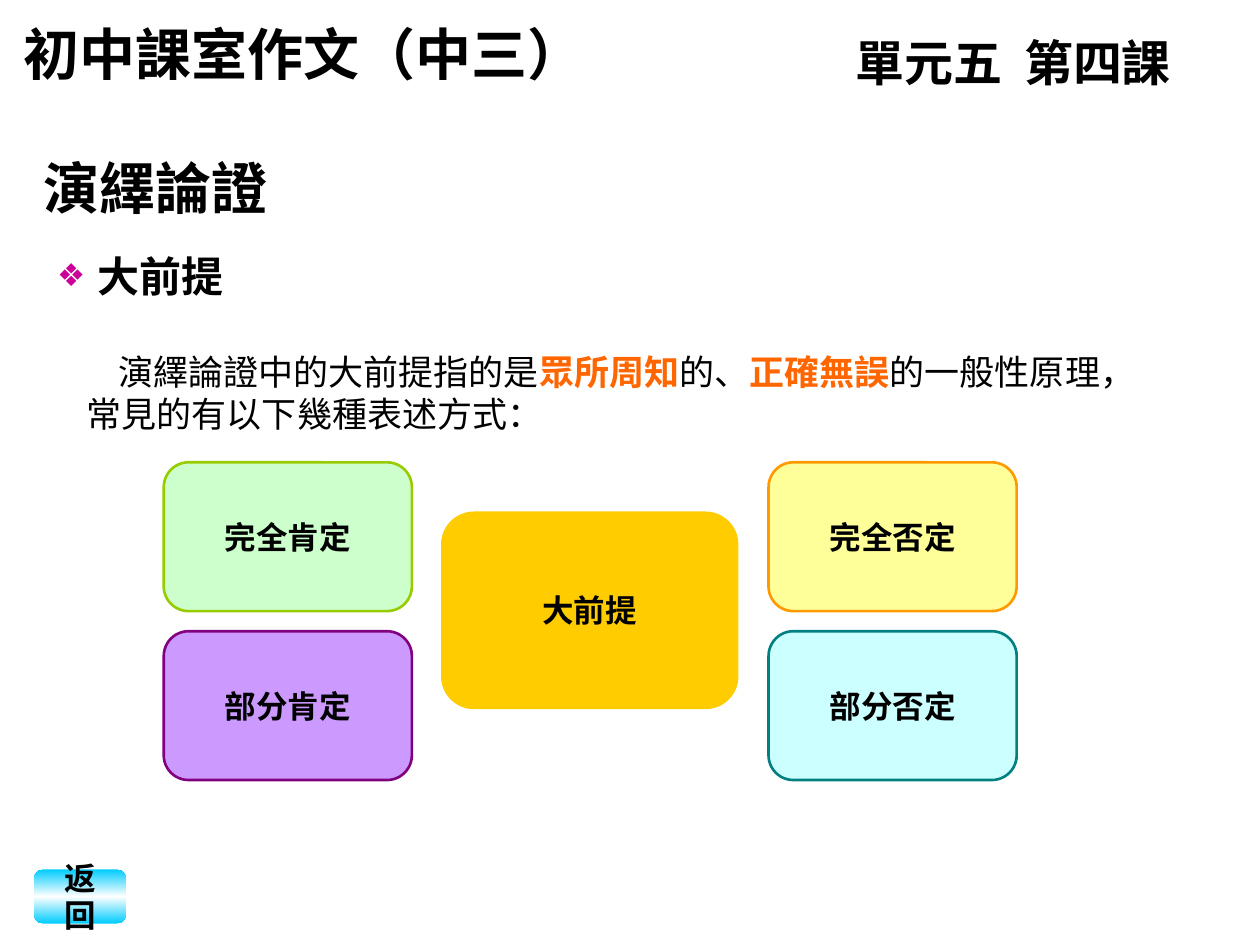
import pptx
import pptx.util
import pptx.dml.color
import pptx.enum.shapes
import pptx.enum.text
import pptx.oxml.ns
import lxml.etree

Pt = pptx.util.Pt
SHAPES = pptx.enum.shapes.MSO_SHAPE
MIDDLE = pptx.enum.text.MSO_ANCHOR.MIDDLE
CENTER = pptx.enum.text.PP_ALIGN.CENTER
BLACK = "000000"
ORANGE = "FF6600"


def color(value):
    return pptx.dml.color.RGBColor.from_string(value)


def add_child(parent, tag, **attributes):
    return lxml.etree.SubElement(parent, pptx.oxml.ns.qn(tag), attributes)


def write(para, text, size=18, font="Arial", fill=BLACK, bold=True):
    span = para.add_run()
    span.text = text
    span.font.size = Pt(size)
    span.font.bold = bold
    span.font.color.rgb = color(fill)
    span.font.name = font
    add_child(span.font._element, "a:ea", typeface=font)


def add_box(page, left, top, width, height):
    box = page.shapes.add_textbox(Pt(left), Pt(top), Pt(width), Pt(height))
    box.text_frame.word_wrap = True
    return box.text_frame


def add_heading(page, place, text, **style):
    write(add_box(page, *place).paragraphs[0], text, **style)


def set_indent(para, margin, first):
    properties = para._p.get_or_add_pPr()
    properties.set("marL", str(Pt(margin)))
    properties.set("indent", str(Pt(first)))
    return properties


def add_bullet_heading(page, place, text):
    para = add_box(page, *place).paragraphs[0]
    properties = set_indent(para, 29, -23)
    bullet_color = add_child(properties, "a:buClr")
    add_child(bullet_color, "a:srgbClr", val="CC0099")
    add_child(properties, "a:buSzPct", val="75000")
    add_child(properties, "a:buFont", typeface="Arial")
    add_child(properties, "a:buChar", char="❖")
    write(para, text, size=24, font="Noto Sans CJK TC")


def add_explanation(page, place, parts):
    frame = add_box(page, *place)
    frame.vertical_anchor = MIDDLE
    para = frame.paragraphs[0]
    set_indent(para, 0, 18)
    para.line_spacing = Pt(24)
    for text, strong in parts:
        write(para, text, size=20, font="Noto Sans CJK SC",
              fill=ORANGE if strong else BLACK, bold=strong)


def add_card(page, place, text, fill=None, line=None, kind=SHAPES.ROUNDED_RECTANGLE):
    card = page.shapes.add_shape(kind, *[Pt(value) for value in place])
    card.shadow.inherit = False
    if fill:
        card.fill.solid()
        card.fill.fore_color.rgb = color(fill)
    if line:
        card.line.color.rgb = color(line)
        card.line.width = Pt(1.5)
    else:
        card.line.fill.background()
    frame = card.text_frame
    frame.word_wrap = True
    frame.vertical_anchor = MIDDLE
    frame.paragraphs[0].alignment = CENTER
    write(frame.paragraphs[0], text)
    return card


def add_return_button(page, place, text):
    button = add_card(page, place, text, kind=SHAPES.FLOWCHART_ALTERNATE_PROCESS)
    button.fill.gradient()
    button.fill.gradient_angle = 270
    stops = button._element.spPr.find(pptx.oxml.ns.qn("a:gradFill")).find(
        pptx.oxml.ns.qn("a:gsLst"))
    for stop in list(stops):
        stops.remove(stop)
    for percent, value in [(0, "00CCFF"), (50, "FFFFFF"), (100, "00CCFF")]:
        stop = add_child(stops, "a:gs", pos=str(percent * 1000))
        add_child(stop, "a:srgbClr", val=value)


def main():
    deck = pptx.Presentation()
    deck.slide_width, deck.slide_height = Pt(720), Pt(540)
    page = deck.slides.add_slide(deck.slide_layouts[6])

    add_bullet_heading(page, (19.5, 139.7, 289.5, 41), "大前提")
    add_heading(page, (18, 84.2, 251.3, 45.4), "演繹論證", size=32)
    add_heading(page, (481.7, 15.1, 241.2, 41), "單元五  第四課", size=28, font="Cabin")
    add_heading(page, (6.5, 7.9, 375.8, 45.4), "初中課室作文（中三）", size=32, font="Cabin")
    add_explanation(page, (42.5, 196.5, 629.3, 55.4), [
        ("演繹論證中的大前提指的是", False),
        ("眾所周知", True),
        ("的、", False),
        ("正確無誤", True),
        ("的一般性原理，常見的有以下幾種表述方式：", False),
    ])

    add_card(page, (252, 292.3, 170, 113), "大前提", fill="FFCC00")
    cards = [
        ("完全肯定", "CCFFCC", "99CC00"),
        ("完全否定", "FFFF99", "FF9900"),
        ("部分肯定", "CC99FF", "800080"),
        ("部分否定", "CCFFFF", "008080"),
    ]
    for index, (text, fill, line) in enumerate(cards):
        row, column = divmod(index, 2)
        place = (93.6 + 345.6 * column, 264.2 + 96.5 * row, 141.8, 85)
        add_card(page, place, text, fill=fill, line=line)
    add_return_button(page, (19.5, 496.8, 52.5, 31), "返回")

    deck.save("out.pptx")


if __name__ == "__main__":
    main()
